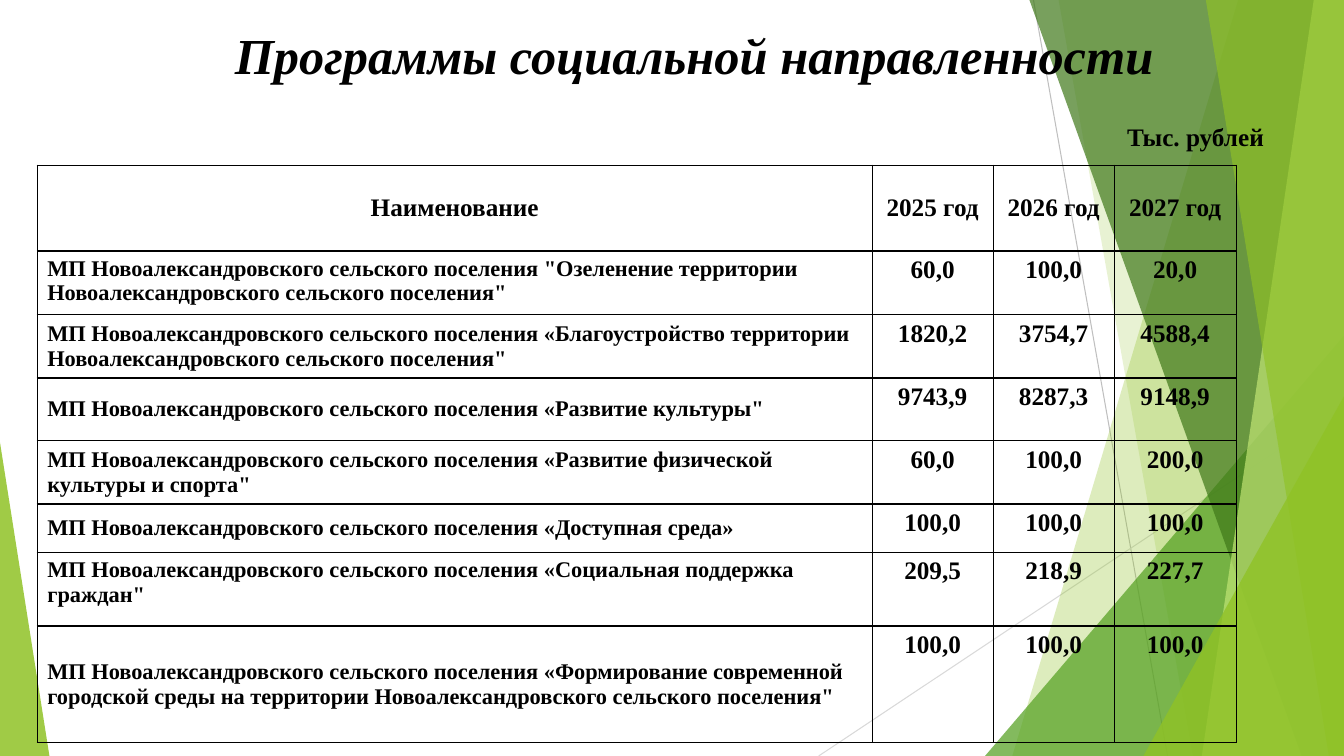
from lxml import etree
from pptx import Presentation
from pptx.dml.color import RGBColor
from pptx.enum.shapes import MSO_CONNECTOR, MSO_SHAPE
from pptx.enum.text import MSO_ANCHOR, PP_ALIGN
from pptx.oxml import parse_xml
from pptx.oxml.ns import nsdecls, qn
from pptx.util import Inches, Pt

LINE = MSO_CONNECTOR.STRAIGHT
TRIANGLE, ROUNDED = MSO_SHAPE.RIGHT_TRIANGLE, MSO_SHAPE.ROUNDED_RECTANGLE
TRIANGLE = MSO_SHAPE.ISOSCELES_TRIANGLE
LEFT, CENTER = PP_ALIGN.LEFT, PP_ALIGN.CENTER
TOP, MIDDLE = MSO_ANCHOR.TOP, MSO_ANCHOR.MIDDLE
WIDTH, HEIGHT = 13.33, 7.5


def paint(color_format, color, alpha=100):
    color_format.rgb = RGBColor.from_string(color)
    if alpha < 100:
        node = color_format._xFill.find(".//" + qn("a:srgbClr"))
        etree.SubElement(node, qn("a:alpha"), val=str(alpha * 1000))


def write(frame, text, size, align=LEFT, italic=False):
    frame.text = text
    para = frame.paragraphs[0]
    para.alignment = align
    span = para.runs[0]
    span.font.name = "Times New Roman"
    span.font.size = Pt(size)
    span.font.bold = True
    span.font.italic = italic or None
    paint(span.font.color, "000000")
    return span


deck = Presentation()
deck.slide_width, deck.slide_height = Inches(WIDTH), Inches(HEIGHT)
page = deck.slides.add_slide(deck.slide_layouts[6])
shapes = page.shapes

# Thin lines behind the bands
for x1, y1, x2, y2, color in [
    (10.25, 0, 11.58, HEIGHT, "BFBFBF"),
    (WIDTH, 4.03, 8.12, HEIGHT, "D9D9D9"),
]:
    line = shapes.add_connector(LINE, Inches(x1), Inches(y1), Inches(x2), Inches(y2))
    paint(line.line.color, color)
    line.line.width = Pt(0.75)
    etree.SubElement(line._element.spPr, qn("a:effectLst"))

# Green facets, back to front: bands (top x, bottom x) reach the right edge,
# triangles (left, width, height, apex) stand on the bottom edge
facets = [
    ((12.28, 10.04), "90C226", 30),
    ((10.5, 11.83), "90C226", 20),
    ((9.77, 3.56, 4.17, 1), "54A021", 72),
    ((10.21, 12.91), "3F7819", 70),
    ((13.03, 11.92), "C0E474", 70),
    ((11.96, 13.18), "90C226", 65),
    ((11.34, 1.99, 3.57, 1), "90C226", 80),
    ((0, 0.49, 3.11, 0), "90C226", 85),
]
for outline, color, alpha in facets:
    if len(outline) == 2:
        top_x, bottom_x = outline
        builder = shapes.build_freeform(Inches(top_x), 0)
        corners = [(WIDTH, 0), (WIDTH, HEIGHT), (bottom_x, HEIGHT)]
        builder.add_line_segments([(Inches(x), Inches(y)) for x, y in corners])
        facet = builder.convert_to_shape()
    else:
        left, width, height, apex = outline
        facet = shapes.add_shape(TRIANGLE, Inches(left), Inches(HEIGHT - height),
                                 Inches(width), Inches(height))
        facet.adjustments[0] = apex
    facet.shadow.inherit = False
    facet.fill.solid()
    paint(facet.fill.fore_color, color, alpha)
    facet.line.fill.background()

# Title with a soft text shadow
title = shapes.add_shape(ROUNDED, Inches(1.04), 0, Inches(11.69), Inches(1.07))
title.shadow.inherit = False
title.fill.background()
title.line.fill.background()
frame = title.text_frame
frame.word_wrap = True
frame.vertical_anchor = MIDDLE
frame.margin_left = frame.margin_right = frame.margin_top = frame.margin_bottom = 0
span = write(frame, "Программы социальной направленности", 36, CENTER, italic=True)
span.font.fill._xPr.find(qn("a:solidFill")).addnext(parse_xml(
    f'<a:effectLst {nsdecls("a")}><a:outerShdw blurRad="38100" dist="38100" dir="2700000">'
    '<a:srgbClr val="000000"><a:alpha val="43000"/></a:srgbClr>'
    '</a:outerShdw></a:effectLst>'))

# Programme table
PREFIX = "МП Новоалександровского сельского поселения "
rows = [
    (0.85, MIDDLE, "Наименование", "2025 год", "2026 год", "2027 год"),
    (0.63, TOP, '"Озеленение территории Новоалександровского сельского поселения"',
     "60,0", "100,0", "20,0"),
    (0.63, MIDDLE, '«Благоустройство территории Новоалександровского сельского поселения"',
     "1820,2", "3754,7", "4588,4"),
    (0.62, MIDDLE, '«Развитие культуры"', "9743,9", "8287,3", "9148,9"),
    (0.63, MIDDLE, '«Развитие физической культуры и спорта"', "60,0", "100,0", "200,0"),
    (0.48, MIDDLE, "«Доступная среда»", "100,0", "100,0", "100,0"),
    (0.73, TOP, '«Социальная поддержка граждан"', "209,5", "218,9", "227,7"),
    (1.16, MIDDLE, "«Формирование современной городской среды на территории "
     'Новоалександровского сельского поселения"', "100,0", "100,0", "100,0"),
]
columns = [8.28, 1.2, 1.2, 1.21]
table = shapes.add_table(len(rows), len(columns), Inches(0.37), Inches(1.64),
                         Inches(sum(columns)), Inches(sum(row[0] for row in rows))).table
table.first_row = table.horz_banding = False
for column, width in zip(table.columns, columns):
    column.width = Inches(width)
for r, (height, name_anchor, *texts) in enumerate(rows):
    table.rows[r].height = Inches(height)
    for c, text in enumerate(texts):
        cell = table.cell(r, c)
        is_name = r > 0 and c == 0
        if is_name:
            write(cell.text_frame, PREFIX + text, 16)
        else:
            write(cell.text_frame, text, 18, CENTER)
        cell.vertical_anchor = name_anchor if is_name or r == 0 else TOP
        cell.fill.background()
        for index, side in enumerate(["lnL", "lnR", "lnT", "lnB"]):
            cell._tc.tcPr.insert(index, parse_xml(
                f'<a:{side} {nsdecls("a")} w="12700"><a:solidFill>'
                f'<a:srgbClr val="000000"/></a:solidFill></a:{side}>'))

# Unit of measure
unit = shapes.add_textbox(Inches(11.08), Inches(1.15), Inches(1.99), Inches(0.4))
unit.text_frame.word_wrap = True
write(unit.text_frame, "Тыс. рублей", 18)

deck.save("out.pptx")
